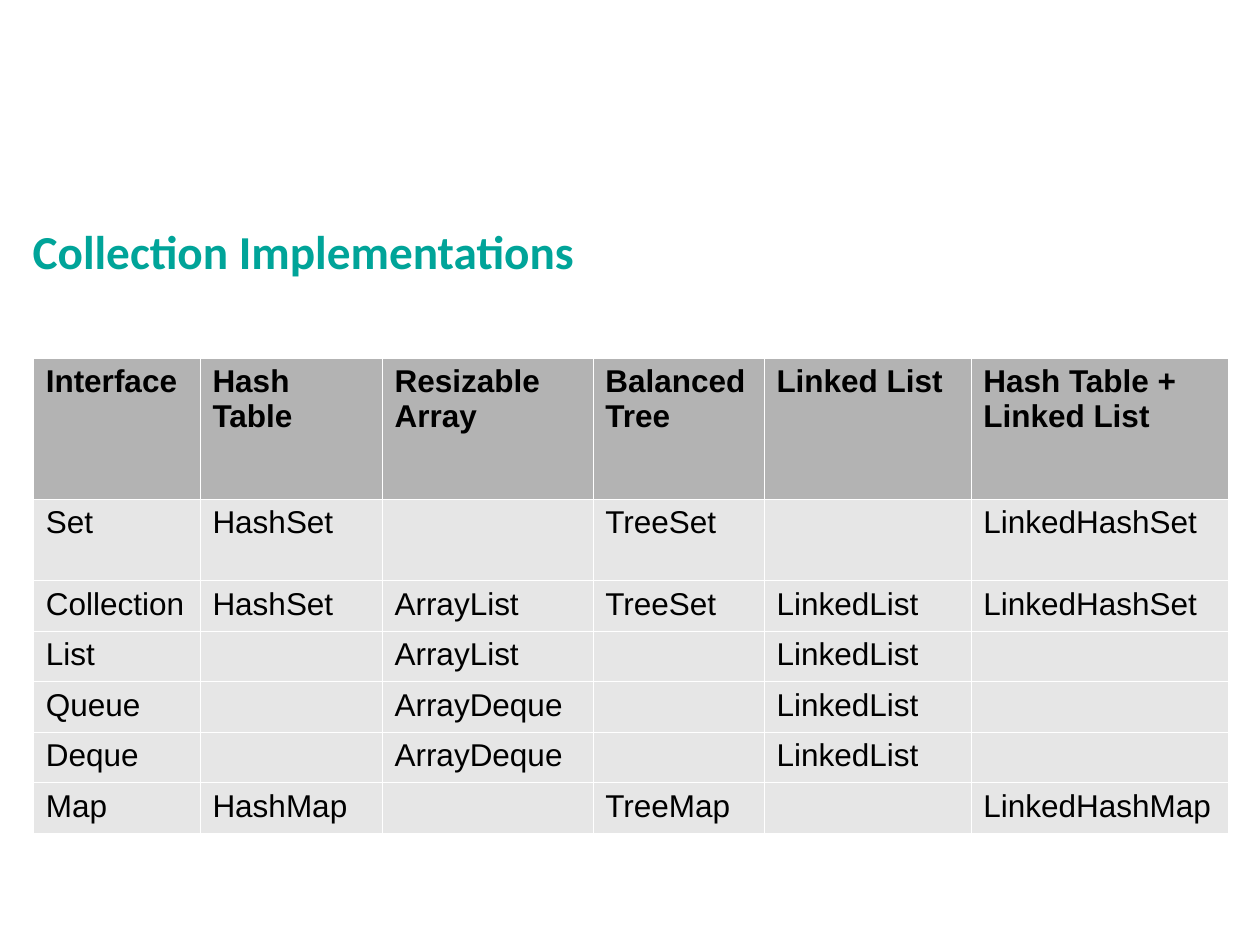
from lxml import etree
from pptx import Presentation
from pptx.dml.color import RGBColor
from pptx.enum.text import MSO_ANCHOR
from pptx.oxml.ns import qn
from pptx.util import Cm, Pt

BOTTOM = MSO_ANCHOR.BOTTOM
TEAL = RGBColor(0x00, 0xA4, 0x99)
BLACK = RGBColor(0x00, 0x00, 0x00)
WHITE = RGBColor(0xFF, 0xFF, 0xFF)
HEADER_GRAY = RGBColor(0xB3, 0xB3, 0xB3)
BODY_GRAY = RGBColor(0xE6, 0xE6, 0xE6)

TITLE_FORMAT = {"name": "Calibri", "size": Pt(27), "bold": True}
HEADER_FORMAT = {"name": "Arial", "size": Pt(18), "bold": True}
BODY_FORMAT = {**HEADER_FORMAT, "bold": False}

ROWS = [
    ["Interface", "Hash Table", "Resizable Array", "Balanced Tree", "Linked List",
     "Hash Table + Linked List"],
    ["Set", "HashSet", "", "TreeSet", "", "LinkedHashSet"],
    ["Collection", "HashSet", "ArrayList", "TreeSet", "LinkedList", "LinkedHashSet"],
    ["List", "", "ArrayList", "", "LinkedList", ""],
    ["Queue", "", "ArrayDeque", "", "LinkedList", ""],
    ["Deque", "", "ArrayDeque", "", "LinkedList", ""],
    ["Map", "HashMap", "", "TreeMap", "", "LinkedHashMap"],
]
COLUMN_WIDTHS = [3.36, 3.67, 4.25, 3.45, 4.17, 5.18]
ROW_HEIGHTS = [2.85, 1.64] + [0.98] * 5


def format_font(font, values, color):
    for name, value in values.items():
        setattr(font, name, value)
    font.color.rgb = color


def add_borders(cell, color, width):
    properties = cell._tc.get_or_add_tcPr()
    for side in ("a:lnL", "a:lnR", "a:lnT", "a:lnB"):
        line = etree.SubElement(properties, qn(side), w=str(int(width)))
        fill = etree.SubElement(line, qn("a:solidFill"))
        etree.SubElement(fill, qn("a:srgbClr"), val=str(color))


deck = Presentation()
deck.slide_width, deck.slide_height = Cm(25.4), Cm(19.05)
page = deck.slides.add_slide(deck.slide_layouts[6])

# Title
box = page.shapes.add_textbox(Cm(0.41), Cm(2.92), Cm(24.59), Cm(2.84))
frame = box.text_frame
frame.word_wrap = True
frame.vertical_anchor = BOTTOM
para = frame.paragraphs[0]
para.line_spacing = 0.9
span = para.add_run()
span.text = "Collection Implementations"
format_font(span.font, TITLE_FORMAT, TEAL)

# Table grid
table = page.shapes.add_table(
    len(ROWS), len(COLUMN_WIDTHS), Cm(0.67), Cm(7.21),
    Cm(sum(COLUMN_WIDTHS)), Cm(sum(ROW_HEIGHTS))).table
for column, width in zip(table.columns, COLUMN_WIDTHS):
    column.width = Cm(width)
for row, height in zip(table.rows, ROW_HEIGHTS):
    row.height = Cm(height)

# Table cells
for row_index, texts in enumerate(ROWS):
    is_header = row_index == 0
    for column_index, text in enumerate(texts):
        cell = table.cell(row_index, column_index)
        add_borders(cell, WHITE, Pt(0.06))
        cell.fill.solid()
        cell.fill.fore_color.rgb = HEADER_GRAY if is_header else BODY_GRAY
        if text:
            span = cell.text_frame.paragraphs[0].add_run()
            span.text = text
            format_font(span.font, HEADER_FORMAT if is_header else BODY_FORMAT, BLACK)

deck.save("out.pptx")
